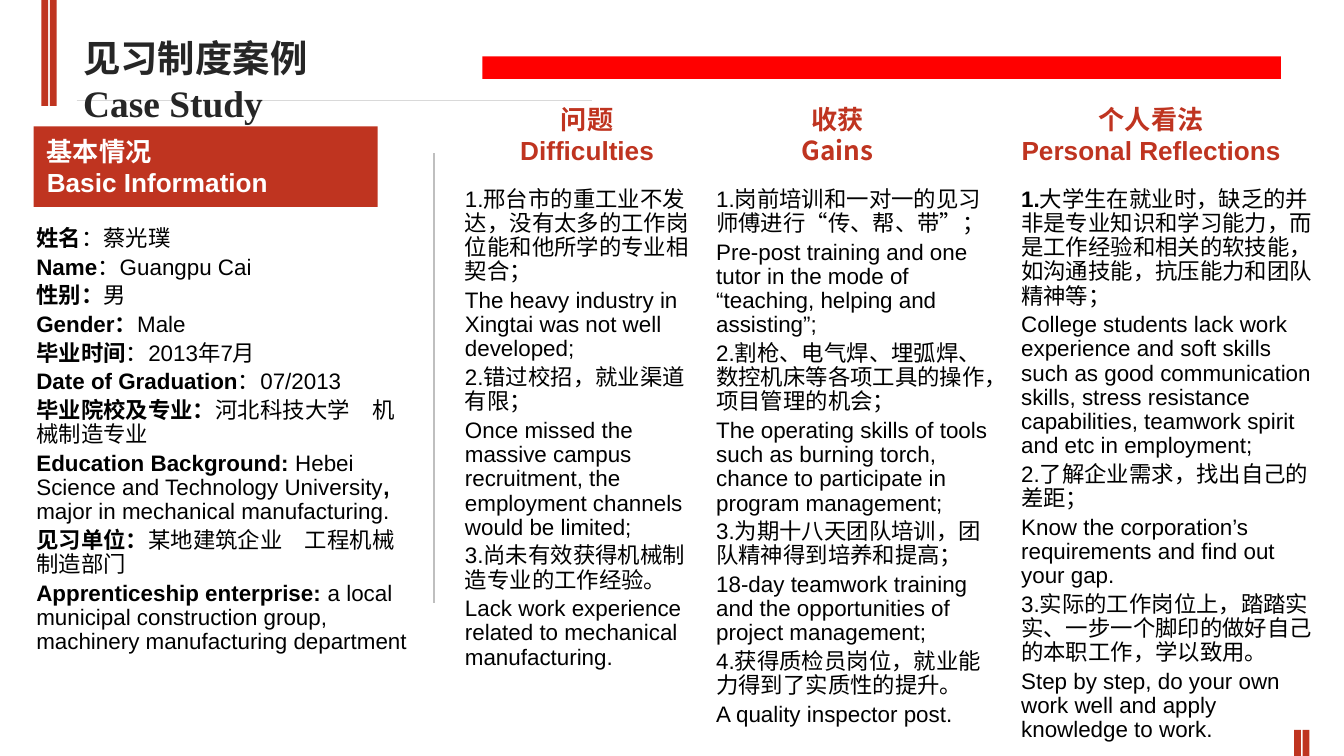
from itertools import cycle

from lxml.etree import SubElement
from pptx import Presentation
from pptx.dml.color import RGBColor
from pptx.enum.shapes import MSO_CONNECTOR as Conn, MSO_SHAPE as Shape
from pptx.enum.text import MSO_ANCHOR as Anchor, MSO_AUTO_SIZE as Fit, PP_ALIGN as Align
from pptx.oxml.ns import qn
from pptx.util import Pt

BRICK = RGBColor(0xBF, 0x34, 0x20)
RED = RGBColor(0xFF, 0x00, 0x00)
BLACK = RGBColor(0x00, 0x00, 0x00)
WHITE = RGBColor(0xFF, 0xFF, 0xFF)
DARK = RGBColor(0x26, 0x26, 0x26)
PALE = RGBColor(0xD9, 0xD9, 0xD9)
GREY = RGBColor(0xBF, 0xBF, 0xBF)
CJK = "Noto Sans CJK SC"

# A bar in a line switches between bold and regular
INFO = [
    "姓名|：蔡光璞",
    "Name|：Guangpu Cai",
    "性别：|男",
    "Gender：|Male",
    "毕业时间|：2013年7月",
    "Date of Graduation|：07/2013",
    "毕业院校及专业：|河北科技大学　机械制造专业",
    "Education Background: |Hebei Science and Technology University|, "
    "|major in mechanical manufacturing.",
    "见习单位：|某地建筑企业　工程机械制造部门",
    "Apprenticeship enterprise: |a local municipal construction group, "
    "machinery manufacturing department",
]
ISSUES = [
    "1.邢台市的重工业不发达，没有太多的工作岗位能和他所学的专业相契合；",
    "The heavy industry in Xingtai was not well developed;",
    "2.错过校招，就业渠道有限；",
    "Once missed the massive campus recruitment, the employment channels "
    "would be limited;",
    "3.尚未有效获得机械制造专业的工作经验。",
    "Lack work experience related to mechanical manufacturing.",
]
GAINS = [
    "1.岗前培训和一对一的见习师傅进行“传、帮、带”；",
    "Pre-post training and one tutor in the mode of “teaching, helping and assisting”;",
    "2.割枪、电气焊、埋弧焊、数控机床等各项工具的操作，项目管理的机会；",
    "The operating skills of tools such as burning torch, chance to participate "
    "in program management;",
    "3.为期十八天团队培训，团队精神得到培养和提高；",
    "18-day teamwork training and the opportunities of project management;",
    "4.获得质检员岗位，就业能力得到了实质性的提升。",
    "A quality inspector post.",
]
VIEWS = [
    "|1.|大学生在就业时，缺乏的并非是专业知识和学习能力，而是工作经验和相关的软技能，"
    "如沟通技能，抗压能力和团队精神等；",
    "College students lack work experience and soft skills such as good communication "
    "skills, stress resistance capabilities, teamwork spirit and etc in employment;",
    "2.了解企业需求，找出自己的差距；",
    "Know the corporation’s requirements and find out your gap.",
    "3.实际的工作岗位上，踏踏实实、一步一个脚印的做好自己的本职工作，学以致用。",
    "Step by step, do your own work well and apply knowledge to work.",
]


def place(box):
    return [Pt(n) for n in box]


def write(frame, lines, size=12, color=BLACK, bold=False, align=Align.LEFT,
          faces=("Arial",), lead=1.0, gap=0, anchor=Anchor.TOP, side=7.2):
    frame.word_wrap = True
    frame.auto_size = Fit.NONE
    frame.vertical_anchor = anchor
    frame.margin_left = frame.margin_right = Pt(side)
    frame.margin_top = frame.margin_bottom = Pt(3.6)
    for i, (line, face) in enumerate(zip(lines, cycle(faces))):
        para = frame.add_paragraph() if i else frame.paragraphs[0]
        para.alignment = align
        para.line_spacing = lead
        para.space_before = Pt(gap if i else 0)
        for j, part in enumerate(line.split("|")):
            if not part:
                continue
            run = para.add_run()
            run.text = part
            font = run.font
            font.name, font.size = face, Pt(size)
            font.bold = bold != bool(j % 2)
            font.color.rgb = color
            SubElement(run._r.get_or_add_rPr(), qn("a:ea"), typeface=CJK)


def label(slide, box, lines, **form):
    write(slide.shapes.add_textbox(*place(box)).text_frame, lines, **form)


def block(slide, box, color):
    rect = slide.shapes.add_shape(Shape.RECTANGLE, *place(box))
    rect.shadow.inherit = False
    rect.fill.solid()
    rect.fill.fore_color.rgb = color
    rect.line.fill.background()
    return rect


def rule(slide, ends, color):
    line = slide.shapes.add_connector(Conn.STRAIGHT, *place(ends))
    line.line.color.rgb = color
    line.line.width = Pt(0.75)
    SubElement(line._element.spPr, qn("a:effectLst"))


def pair(slide, box):
    """Two slim bars side by side that fill the box."""
    x, y, w, h = box
    bar = 0.45 * w
    for left in (x, x + w - bar):
        block(slide, (left, y, bar, h), BRICK)


def header(slide, box):
    x, y, w, h = box
    rule(slide, (x + 3.6, 54, x + 280, 54), PALE)
    block(slide, (258.5, 30.2, 427.7, 12.2), RED)
    title = slide.shapes.title
    title.left, title.top, title.width, title.height = place(box)
    write(title.text_frame, ["见习制度案例", "Case Study"], size=20, color=DARK,
          bold=True, faces=("Arial Narrow", "Times New Roman"))
    # Keep the title text above the thin rule
    slide.shapes._spTree.append(title._element)


def profile(slide, box):
    x, y, w, h = box
    head = block(slide, (x + 1.4, y, 184.3, 43.2), BRICK)
    write(head.text_frame, ["基本情况", "Basic Information"], size=14, color=WHITE,
          bold=True, anchor=Anchor.MIDDLE)
    label(slide, (x, y + 50.4, w, h - 50.4), INFO, bold=True, lead=0.9, gap=2.4, side=2.9)


def column(slide, box, head, lines, shift, wide, faces=("Arial",)):
    """Centred heading, offset by shift, above a body of text."""
    x, y, w, h = box
    label(slide, (x + shift, y, wide, 41), head, size=14, color=BRICK, bold=True,
          align=Align.CENTER, faces=faces)
    label(slide, (x, y + 45.4, w, h - 45.4), lines, lead=0.9, gap=2.4)


def main():
    deck = Presentation()
    deck.slide_width, deck.slide_height = Pt(720), Pt(405)
    slide = deck.slides.add_slide(deck.slide_layouts[5])

    # Corner bars
    pair(slide, (22.2, 0, 8.2, 56.8))
    pair(slide, (693.3, 391, 8.2, 14))

    # Three columns of findings
    column(slide, (242, 51.8, 140.4, 316), ["问题", "Difficulties"], ISSUES, 4.2, 136.8)
    column(slide, (376.6, 51.8, 163.4, 348), ["收获", "Gains"], GAINS, 3.6, 136.8,
           faces=("Arial", CJK))
    column(slide, (540, 51.8, 170.6, 353), ["个人看法", "Personal Reflections"], VIEWS,
           -4.3, 162)

    # Personal data, divider and title
    profile(slide, (16.6, 67.7, 208, 293))
    rule(slide, (232.6, 82, 232.6, 323.3), GREY)
    header(slide, (37.4, 15.1, 304.6, 55.4))
    deck.save("out.pptx")


if __name__ == "__main__":
    main()
